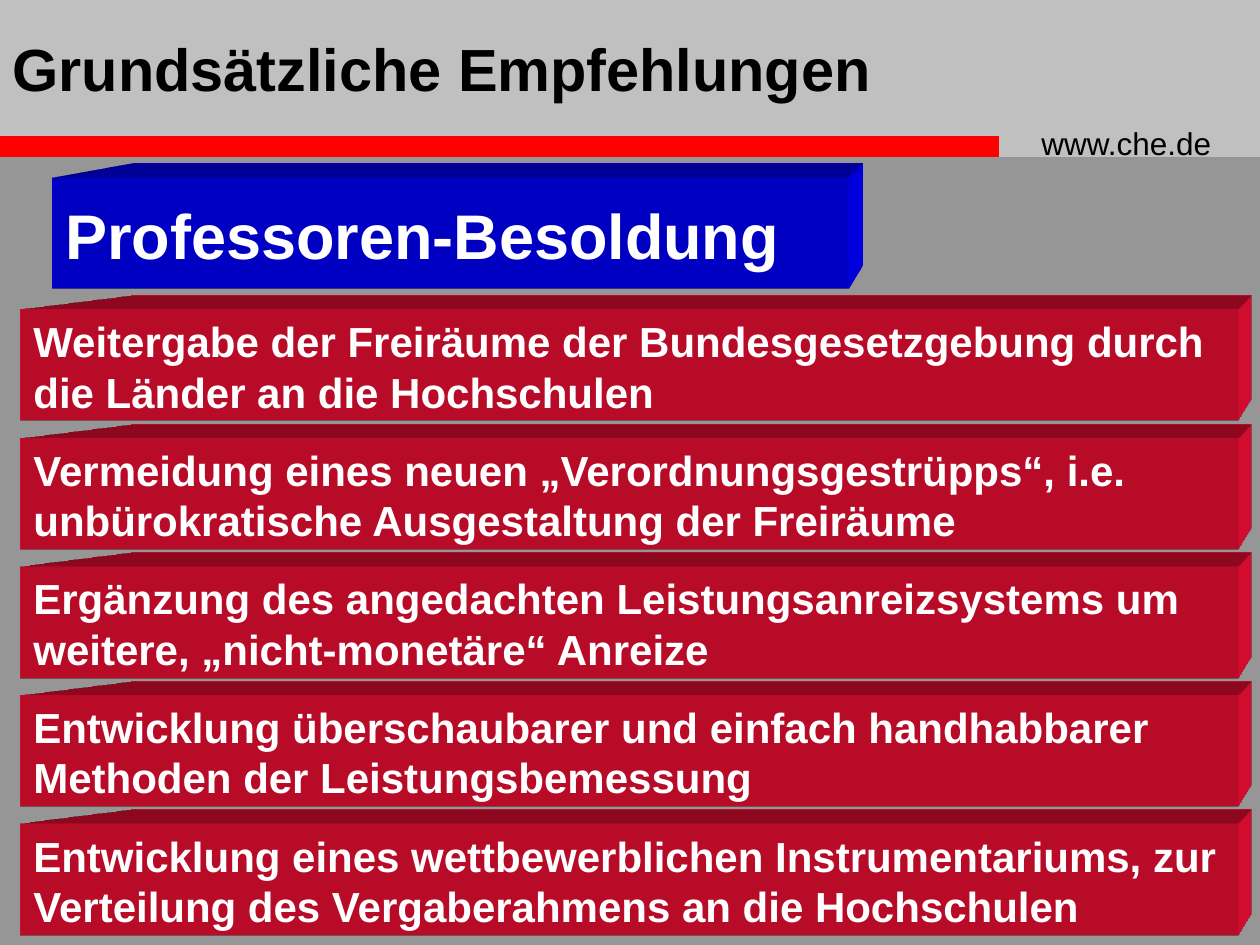
from lxml import etree
from pptx import Presentation
from pptx import util as u
from pptx.dml.color import RGBColor
from pptx.enum import shapes, text

TITLE = "Grundsätzliche Empfehlungen"
WEBSITE = "www.che.de"
TOPIC = "Professoren-Besoldung"
RECOMMENDATIONS = [
    "Weitergabe der Freiräume der Bundesgesetzgebung durch\vdie Länder an die Hochschulen",
    "Vermeidung eines neuen „Verordnungsgestrüpps“, i.e.\vunbürokratische Ausgestaltung der Freiräume",
    "Ergänzung des angedachten Leistungsanreizsystems um\vweitere, „nicht-monetäre“ Anreize",
    "Entwicklung überschaubarer und einfach handhabbarer\vMethoden der Leistungsbemessung",
    "Entwicklung eines wettbewerblichen Instrumentariums, zur\vVerteilung des Vergaberahmens an die Hochschulen",
]

BACKGROUND = RGBColor(0x96, 0x96, 0x96)
HEADER = RGBColor(0xC0, 0xC0, 0xC0)
STRIPE = RGBColor(0xFF, 0x00, 0x00)
BLUE = RGBColor(0x00, 0x00, 0xFF)
CRIMSON = RGBColor(0xF0, 0x0E, 0x34)
WHITE = RGBColor(0xFF, 0xFF, 0xFF)
BLACK = RGBColor(0x00, 0x00, 0x00)

PX = u.Inches(1) / 126
BLOCK_HEIGHT = 110
FIRST_TOP = 311
PITCH = 128.6
DRAWING_NS = "http://schemas.openxmlformats.org/drawingml/2006/main"


def px(*lengths):
    return [u.Emu(round(length * PX)) for length in lengths]


def write(shape, words, size, color, bold):
    frame = shape.text_frame
    frame.text = words
    paragraph = frame.paragraphs[0]
    paragraph.alignment = text.PP_ALIGN.LEFT
    paragraph.font.name = "Arial"
    paragraph.font.size = u.Pt(size)
    paragraph.font.bold = bold
    paragraph.font.color.rgb = color
    return frame


def add_rect(slide, box, color):
    rect = slide.shapes.add_shape(shapes.MSO_SHAPE.RECTANGLE, *px(*box))
    rect.shadow.inherit = False
    rect.fill.solid()
    rect.fill.fore_color.rgb = color
    rect.line.fill.background()
    return rect


def extrude(shape, color):
    depth = etree.fromstring(
        f'<a:depth xmlns:a="{DRAWING_NS}">'
        '<a:scene3d><a:camera prst="legacyPerspectiveTopRight"/>'
        '<a:lightRig rig="legacyFlat3" dir="b"/></a:scene3d>'
        '<a:sp3d extrusionH="887400" prstMaterial="legacyMatte">'
        '<a:bevelT w="13500" h="13500" prst="angle"/>'
        '<a:bevelB w="13500" h="13500" prst="angle"/>'
        f'<a:extrusionClr><a:srgbClr val="{color}"/></a:extrusionClr>'
        '</a:sp3d></a:depth>')
    shape.element.spPr.extend(list(depth))


def add_block(slide, box, color, words, size):
    block = add_rect(slide, box, color)
    extrude(block, color)
    frame = write(block, words, size, WHITE, True)
    frame.word_wrap = False
    frame.vertical_anchor = text.MSO_ANCHOR.MIDDLE


def main():
    deck = Presentation()
    deck.slide_width, deck.slide_height = px(1260, 945)
    slide = deck.slides.add_slide(deck.slide_layouts[5])
    slide.background.fill.solid()
    slide.background.fill.fore_color.rgb = BACKGROUND

    add_rect(slide, (0, 0, 1260, 157), HEADER)
    add_rect(slide, (0, 136, 999, 21), STRIPE)
    website = slide.shapes.add_textbox(*px(1029, 118, 221, 50))
    write(website, WEBSITE, 18, BLACK, False).word_wrap = True

    title = slide.shapes.title
    title.left, title.top, title.width, title.height = px(0, 0, 1103, 136)
    write(title, TITLE, 34, BLACK, True).vertical_anchor = text.MSO_ANCHOR.MIDDLE
    slide.shapes.element.append(title.element)

    add_block(slide, (53, 179, 794, BLOCK_HEIGHT), BLUE, TOPIC, 36)
    for row, recommendation in enumerate(RECOMMENDATIONS):
        top = FIRST_TOP + row * PITCH
        add_block(slide, (21, top, 1215, BLOCK_HEIGHT), CRIMSON, recommendation, 24)

    deck.save("out.pptx")


if __name__ == "__main__":
    main()
